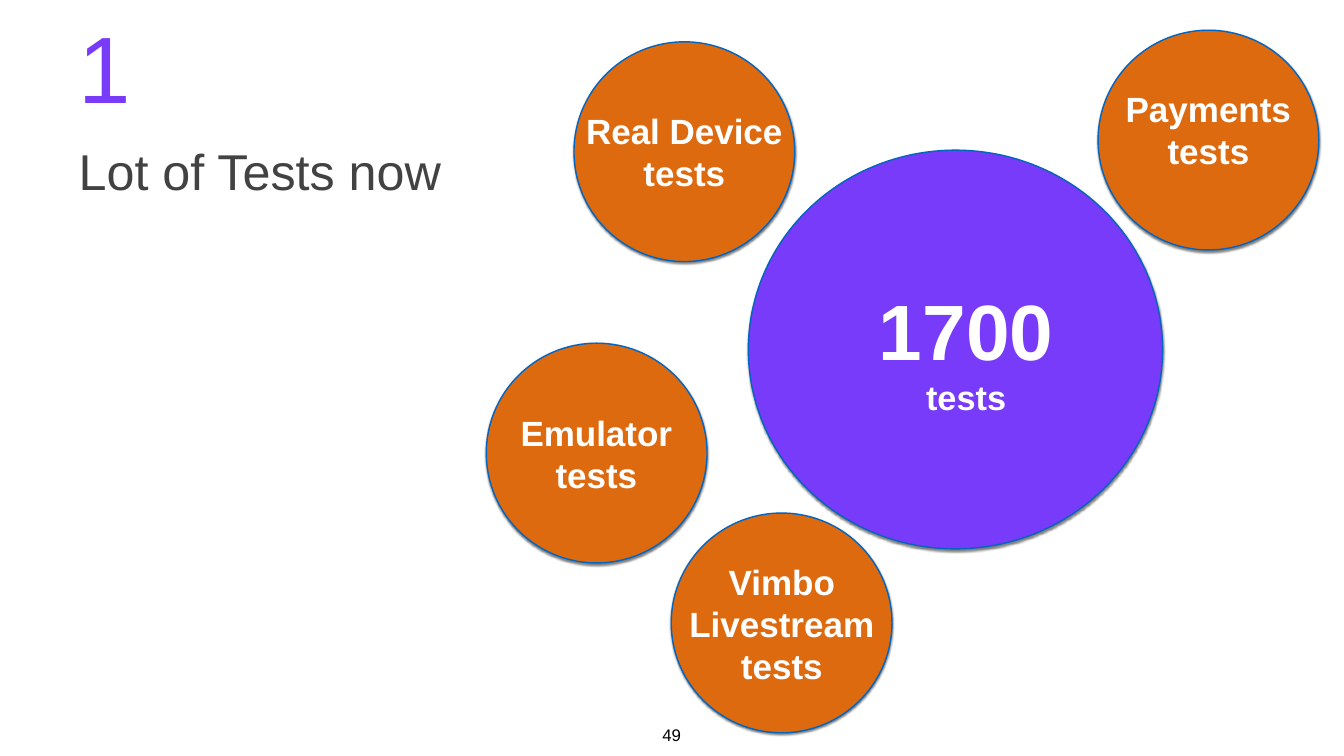
"""Build the slide that shows how many tests there are now and of which kinds."""
from lxml import etree
from pptx import Presentation
from pptx.dml.color import RGBColor
from pptx.enum import shapes, text
from pptx.oxml import ns
from pptx.util import Inches, Pt

PURPLE = RGBColor(0x78, 0x3B, 0xF9)
ORANGE = RGBColor(0xDE, 0x6A, 0x10)
BLUE = RGBColor(0x03, 0x65, 0xC0)
GREY = RGBColor(0x42, 0x42, 0x42)
BLACK = RGBColor(0, 0, 0)
WHITE = RGBColor(0xFF, 0xFF, 0xFF)

MARGIN = Inches(0.06)
FRAME = {"margin_left": MARGIN, "margin_top": MARGIN,
         "margin_right": MARGIN, "margin_bottom": MARGIN}
LABEL_FRAME = {**FRAME, "word_wrap": False,
               "auto_size": text.MSO_AUTO_SIZE.SHAPE_TO_FIT_TEXT}


def format_object(target, values):
    for name, value in values.items():
        setattr(target, name, value)


def add_label(slide, box, lines, color, bold, anchor):
    label = slide.shapes.add_textbox(*map(Inches, box))
    frame = label.text_frame
    frame.text = "\n".join(line for line, size in lines)
    format_object(frame, {**LABEL_FRAME, "vertical_anchor": anchor})
    for paragraph, (line, size) in zip(frame.paragraphs, lines):
        paragraph.alignment = text.PP_ALIGN.CENTER
        format_object(paragraph.font, {"name": "Arial", "size": Pt(size), "bold": bold})
        paragraph.font.color.rgb = color


presentation = Presentation()
presentation.slide_width = Inches(26.67)
presentation.slide_height = Inches(15)
slide = presentation.slides.add_slide(presentation.slide_layouts[5])

title = slide.shapes.title
format_object(title, {"left": Inches(1.5), "top": Inches(0.92),
                      "width": Inches(12.93), "height": Inches(3.28)})
title.text_frame.text = "1\nLot of Tests now"
format_object(title.text_frame, {**FRAME, "word_wrap": True,
                                 "auto_size": text.MSO_AUTO_SIZE.NONE,
                                 "vertical_anchor": text.MSO_ANCHOR.MIDDLE})
title_styles = [(134.7, PURPLE, 0.5, 0), (71.9, GREY, 0.8, 52)]
for paragraph, (size, color, spacing, before) in zip(title.text_frame.paragraphs, title_styles):
    format_object(paragraph, {"alignment": text.PP_ALIGN.LEFT, "line_spacing": spacing,
                              "space_before": Pt(before)})
    format_object(paragraph.font, {"name": "Arial", "size": Pt(size)})
    paragraph.font.color.rgb = color

add_label(slide, (13.08, 14.31, 0.5, 0.51), [("49", 24)], BLACK, False, text.MSO_ANCHOR.TOP)

SMALL = (4.38, 4.36)
bubbles = [
    ((14.85, 2.98, 8.22, 7.91), PURPLE, (17.16, 5.54, 4.02, 2.79), [("1700", 112), ("tests", 49)]),
    ((9.65, 6.81, *SMALL), ORANGE, (10.17, 8.1, 3.33, 1.78), [("Emulator", 50), ("tests", 50)]),
    ((11.39, 0.83, *SMALL), ORANGE, (11.47, 2.12, 4.22, 1.78), [("Real Device", 50), ("tests", 50)]),
    ((21.79, 0.6, *SMALL), ORANGE, (22.18, 1.67, 3.6, 1.78), [("Payments", 50), ("tests", 50)]),
    ((13.32, 10.18, *SMALL), ORANGE, (13.52, 11.06, 3.99, 2.61),
     [("Vimbo", 50), ("Livestream", 50), ("tests", 50)]),
]
for circle_box, color, label_box, lines in bubbles:
    circle = slide.shapes.add_shape(shapes.MSO_SHAPE.OVAL, *map(Inches, circle_box))
    circle.fill.solid()
    circle.fill.fore_color.rgb = color
    circle.line.color.rgb = BLUE
    circle.line.width = Pt(2)
    circle.shadow.inherit = False
    effects = circle.element.spPr.find(ns.qn("a:effectLst"))
    shadow = etree.SubElement(effects, ns.qn("a:outerShdw"), blurRad=str(Pt(3)),
                              dist=str(Pt(2)), dir="5400000", rotWithShape="0")
    shadow_color = etree.SubElement(shadow, ns.qn("a:srgbClr"), val=str(BLACK))
    etree.SubElement(shadow_color, ns.qn("a:alpha"), val="50000")
    add_label(slide, label_box, lines, WHITE, True, text.MSO_ANCHOR.MIDDLE)

presentation.save("out.pptx")
